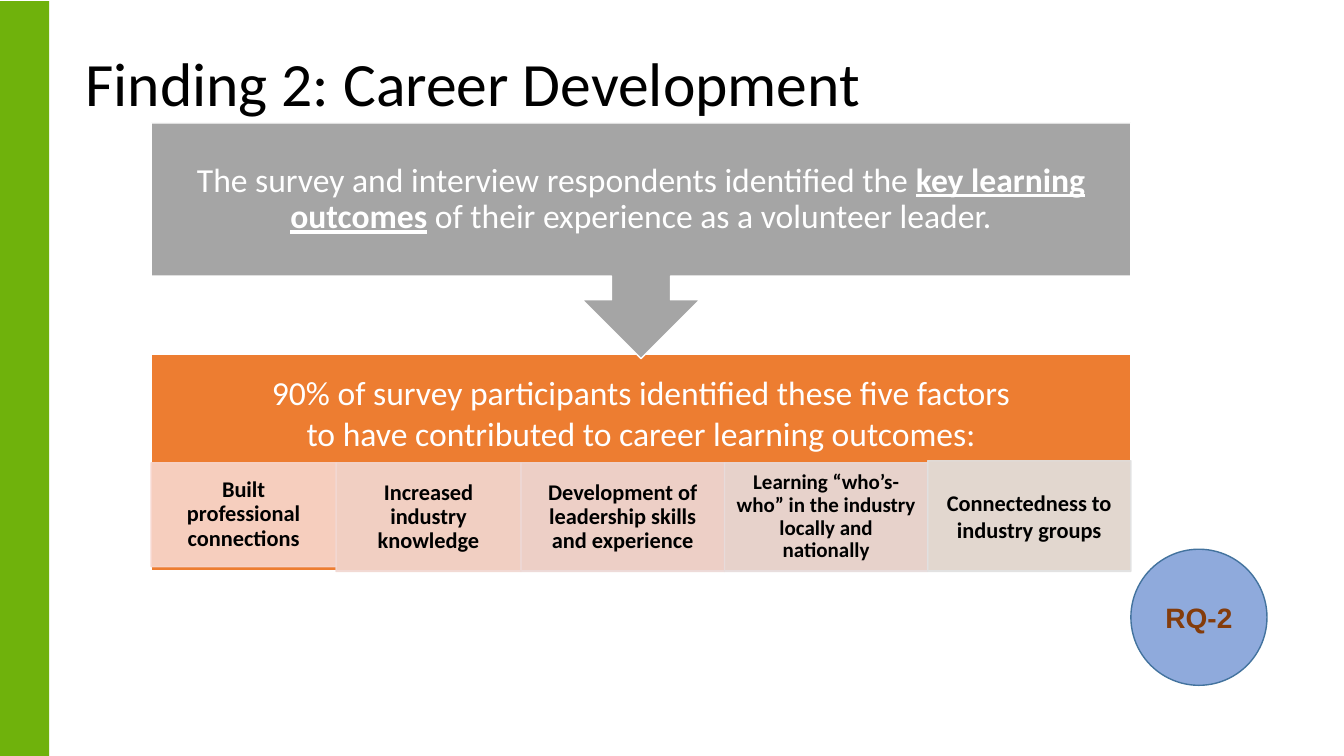
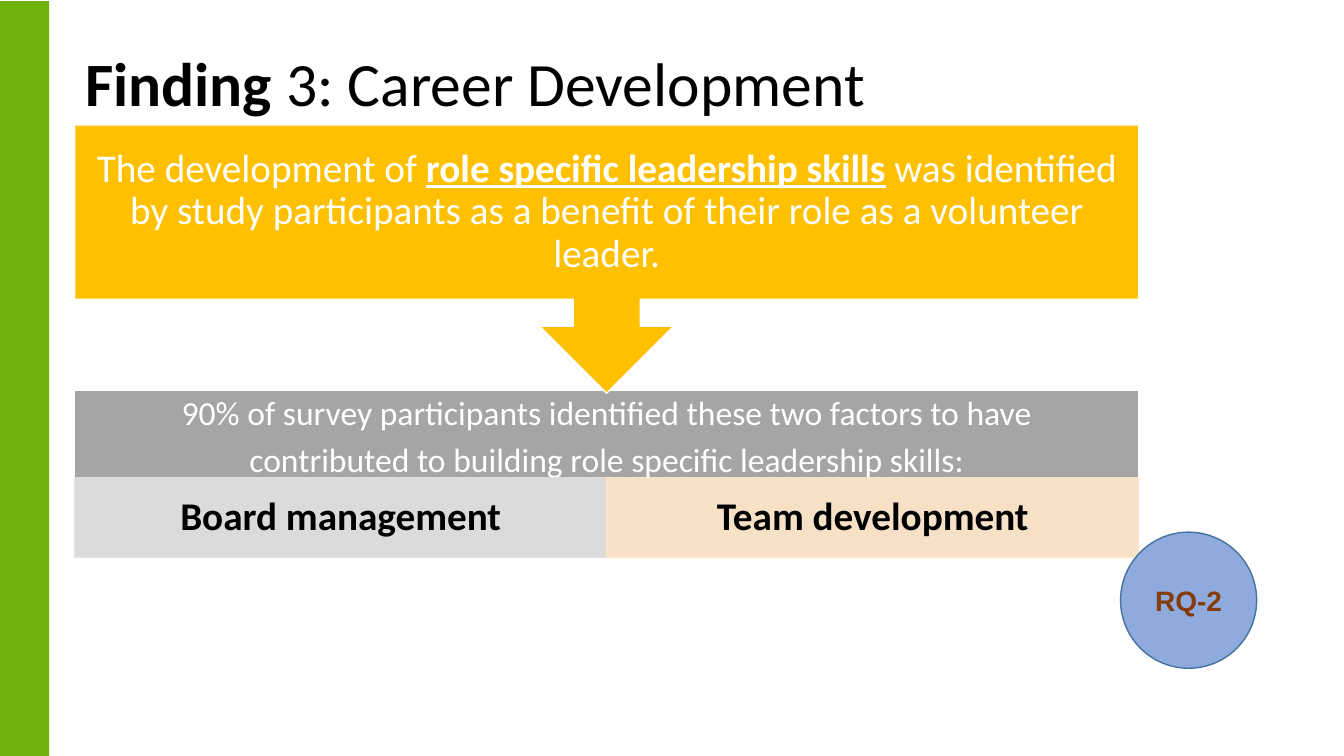
from dataclasses import dataclass

from lxml import etree
from pptx import Presentation
from pptx.dml.color import RGBColor
from pptx.enum.shapes import MSO_SHAPE
from pptx.enum.text import MSO_ANCHOR, MSO_AUTO_SIZE, PP_ALIGN
from pptx.oxml.ns import qn
from pptx.util import Cm, Pt

RECT, OVAL = MSO_SHAPE.RECTANGLE, MSO_SHAPE.OVAL
CALLOUT = MSO_SHAPE.DOWN_ARROW_CALLOUT
LEFT, CENTER = PP_ALIGN.LEFT, PP_ALIGN.CENTER
MIDDLE, NO_FIT = MSO_ANCHOR.MIDDLE, MSO_AUTO_SIZE.NONE


@dataclass(frozen=True)
class Theme:
    font: str = "Calibri"
    badge_font: str = "Arial"
    white: str = "FFFFFF"
    black: str = "000000"
    green: str = "6FB20C"
    gray: str = "A5A5A5"
    orange: str = "ED7D31"
    gold: str = "FFC000"
    blue: str = "8FAADC"
    edge: str = "43739E"
    brown: str = "843C0B"
    title: int = 44
    large: int = 28
    lead: int = 24
    badge: int = 20
    cell: int = 16
    small: int = 15


THEME = Theme()
BOLD = {"bold": True}
KEY = {"bold": True, "underline": True}


@dataclass
class Cell:
    lines: list
    fill: str
    width: float
    height: float
    size: int = THEME.cell
    lift: float = 0
    space: float = 0.9


def place(shape, box):
    for name, value in zip(("left", "top", "width", "height"), box):
        setattr(shape, name, Cm(value))


def write(shape, lines, size, color, font=THEME.font, align=CENTER,
          space=0.9, gap=0, pad=(0.25, 0.13, 0.25, 0.13), mark=KEY):
    """Fill a shape with paragraphs; parts between asterisks get the mark."""
    frame = shape.text_frame
    frame.auto_size = NO_FIT
    frame.word_wrap = True
    frame.vertical_anchor = MIDDLE
    for side, value in zip(("left", "top", "right", "bottom"), pad):
        setattr(frame, f"margin_{side}", Cm(value))
    for i, line in enumerate(lines):
        para = frame.add_paragraph() if i else frame.paragraphs[0]
        form = {"alignment": align, "line_spacing": space,
                "space_before": Pt(gap if i else 0), "space_after": Pt(0)}
        for name, value in form.items():
            setattr(para, name, value)
        for j, part in enumerate(line.split("*")):
            if not part:
                continue
            run = para.add_run()
            run.text = part
            style = {"name": font, "size": Pt(size), "bold": False}
            if j % 2:
                style.update(mark)
            for name, value in style.items():
                setattr(run.font, name, value)
            run.font.color.rgb = RGBColor.from_string(color)


def draw(slide, kind, box, fill, line=None, alpha=None):
    shape = slide.shapes.add_shape(kind, *map(Cm, box))
    shape.shadow.inherit = False
    shape.fill.solid()
    shape.fill.fore_color.rgb = RGBColor.from_string(fill)
    if line:
        shape.line.color.rgb = RGBColor.from_string(line)
        shape.line.width = Pt(1)
    else:
        shape.line.fill.background()
    if alpha:
        for color in shape._element.spPr.iter(qn("a:srgbClr")):
            node = etree.SubElement(color, qn("a:alpha"))
            node.set("val", str(alpha * 1000))
    return shape


def set_layout(layout, slide):
    """Put the title place and the green side bar on the layout."""
    place(layout.placeholders[0], (1.9, 0.58, 28.88, 3.2))
    bar = draw(slide, RECT, (0, 0.03, 1.24, 19.02), THEME.green)
    layout.shapes._spTree.insert(2, bar._element)


def add_title(slide, text):
    write(slide.shapes.title, [text], THEME.title, THEME.black,
          align=LEFT, mark=BOLD)


def add_panel(slide, box, fill, lines, head, cells, pad, space=1, gap=0):
    """Draw a panel with a heading and a row of cells from head downwards."""
    x, y, _, high = box
    panel = draw(slide, RECT, box, fill, THEME.white)
    base = high - head - 0.2
    write(panel, lines, THEME.lead, THEME.white, space=space, gap=gap,
          pad=(0.48, 0, 0.48, base))
    for cell in cells:
        spot = (x, y + head - cell.lift, cell.width, cell.height + cell.lift)
        shape = draw(slide, RECT, spot, cell.fill, cell.fill, 90)
        write(shape, [f"*{line}*" for line in cell.lines], cell.size,
              THEME.black, space=cell.space, pad=pad, mark=BOLD)
        x += cell.width


def add_callout(slide, box, fill, text, size):
    shape = draw(slide, CALLOUT, box, fill, THEME.white)
    write(shape, [text], size, THEME.white, pad=(0.5,) * 4)


def add_badge(slide, x, y):
    shape = draw(slide, OVAL, (x, y, 3.43, 3.43), THEME.blue, THEME.edge)
    write(shape, ["*RQ-2*"], THEME.badge, THEME.brown, THEME.badge_font,
          space=1, mark=BOLD)


def add_outcomes(slide):
    add_title(slide, "Finding 2: Career Development")
    cells = [
        Cell(["Built professional connections"], "F8D7CE", 4.66, 2.62),
        Cell(["Increased industry knowledge"], "F2D8D2", 4.66, 2.74),
        Cell(["Development of leadership skills and experience"],
             "EDD9D7", 5.13, 2.74),
        Cell(["Learning “who’s-who” in the industry locally and nationally"],
             "E7DCDC", 5.12, 2.74, THEME.small),
        Cell(["Connectedness to", "industry groups"],
             "E1E1E1", 5.12, 2.74, lift=0.05, space=1),
    ]
    add_panel(slide, (3.81, 8.94, 24.69, 5.44), THEME.orange,
              ["90% of survey participants identified these five factors",
               "to have contributed to career learning outcomes:"],
              2.72, cells, (0.3, 0.05, 0.3, 0.05))
    add_callout(slide, (3.81, 3.1, 24.69, 5.94), THEME.gray,
                "The survey and interview respondents identified the "
                "*key learning outcomes* of their experience as a "
                "volunteer leader.", THEME.lead)
    add_badge(slide, 28.5, 13.84)


def add_skills(slide):
    add_title(slide, "*Finding* 3: Career Development")
    cells = [Cell([text], fill, 13.41, 2.01, THEME.large) for text, fill in (
        ("Board management", "E1E1E1"), ("Team development", "FFE8CB"))]
    add_panel(slide, (1.88, 9.83, 26.82, 4.22), THEME.gray,
              ["90% of survey participants identified these two factors "
               "to have",
               "contributed to building role specific leadership skills:"],
              2.21, cells, (0.56, 0.1, 0.56, 0.1), space=0.9, gap=8)
    add_callout(slide, (1.88, 3.15, 26.82, 6.76), THEME.gold,
                "The development of *role specific leadership skills* was "
                "identified by study participants as a benefit of their "
                "role as a volunteer leader.", THEME.large)
    add_badge(slide, 28.24, 13.41)


def main():
    prs = Presentation()
    prs.slide_width, prs.slide_height = Cm(33.87), Cm(19.05)
    layout = prs.slide_layouts[5]
    slides = [prs.slides.add_slide(layout) for _ in range(2)]
    set_layout(layout, slides[0])
    for slide, build in zip(slides, (add_outcomes, add_skills)):
        build(slide)
    prs.save("out.pptx")


if __name__ == "__main__":
    main()
